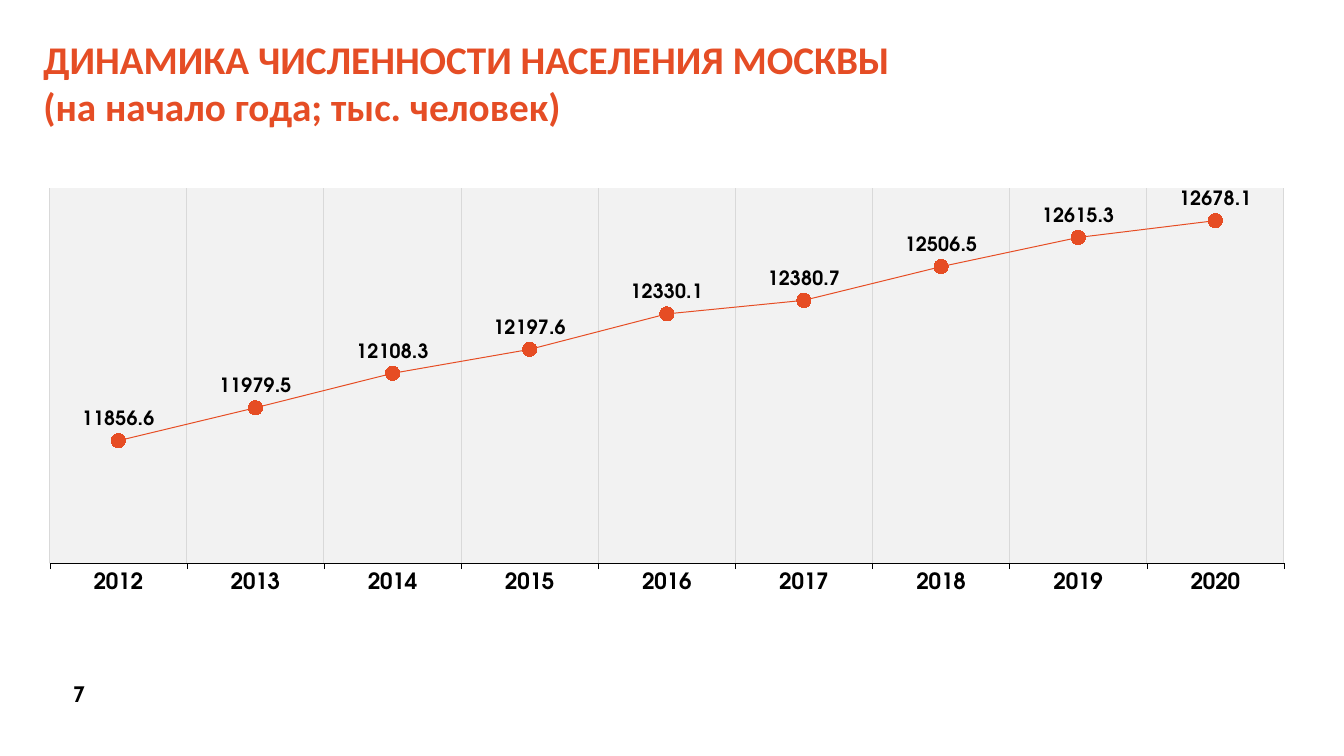
from pptx import Presentation
from pptx.chart.data import CategoryChartData
from pptx.dml.color import RGBColor
from pptx.enum.chart import XL_CHART_TYPE, XL_LABEL_POSITION, XL_MARKER_STYLE, XL_TICK_MARK
from pptx.enum.text import MSO_ANCHOR, PP_ALIGN
from pptx.oxml import parse_xml
from pptx.oxml.ns import nsdecls, qn
from pptx.util import Inches, Pt

ORANGE, BLACK, PALE, GRID = "E64D24", "000000", "F2F2F2", "D9D9D9"
TITLE_ORANGE = "E54D25"
TITLE = ["ДИНАМИКА ЧИСЛЕННОСТИ НАСЕЛЕНИЯ МОСКВЫ", "(на начало года; тыс. человек)"]
POPULATION = [11856.6, 11979.5, 12108.3, 12197.6, 12330.1,
              12380.7, 12506.5, 12615.3, 12678.1]
YEARS = [str(2012 + i) for i in range(len(POPULATION))]
WIDTH, HEIGHT = 13.33, 7.5
MARGIN = 0.33


def rgb(value):
    return RGBColor.from_string(value)


def set_font(font, name, size, color, bold=True):
    font.name, font.size, font.bold = name, Pt(size), bold
    font.color.rgb = rgb(color)


def set_line(line, color, width):
    line.color.rgb = rgb(color)
    line.width = Pt(width)


def add_title(s, lines):
    sp = s.shapes.title
    sp.left, sp.top = Inches(MARGIN), Inches(0.3)
    sp.width, sp.height = Inches(10.92), Inches(1.04)
    tf = sp.text_frame
    tf.text = "\n".join(lines)
    tf.word_wrap = True
    tf.vertical_anchor = MSO_ANCHOR.TOP
    for p in tf.paragraphs:
        p.alignment = PP_ALIGN.LEFT
        set_font(p.font, "Calibri", 28, TITLE_ORANGE)


def add_page_number(s, number):
    sp = s.shapes.add_textbox(Inches(0.51), Inches(6.7), Inches(0.55), Inches(0.37))
    tf = sp.text_frame
    tf.word_wrap = True
    p = tf.paragraphs[0]
    p.text = number
    p.alignment = PP_ALIGN.CENTER
    set_font(p.font, "Cabin", 16, BLACK)


def format_plot_area(chart, x, y, w, h, fill):
    area = chart._chartSpace.chart.plotArea
    for old in area.findall(qn("c:layout")):
        area.remove(old)
    sides = "".join(f'<c:{k} val="{v}"/>' for k, v in zip("xywh", (x, y, w, h)))
    area.insert(0, parse_xml(
        f'<c:layout {nsdecls("c")}><c:manualLayout><c:layoutTarget val="inner"/>'
        f'<c:xMode val="edge"/><c:yMode val="edge"/>{sides}</c:manualLayout></c:layout>'))
    area.append(parse_xml(
        f'<c:spPr {nsdecls("c", "a")}><a:solidFill><a:srgbClr val="{fill}"/></a:solidFill>'
        '<a:ln><a:noFill/></a:ln></c:spPr>'))


def format_axes(chart):
    axis = chart.category_axis
    axis.major_tick_mark = XL_TICK_MARK.OUTSIDE
    axis.has_major_gridlines = True
    set_line(axis.major_gridlines.format.line, GRID, 0.75)
    set_line(axis.format.line, BLACK, 0.18)
    set_font(axis.tick_labels.font, "TeX Gyre Adventor", 16, BLACK)
    axis = chart.value_axis
    axis.minimum_scale, axis.maximum_scale = 11400, 12800
    axis.has_major_gridlines = False
    axis.visible = False


def format_series(series):
    series.smooth = False
    set_line(series.format.line, ORANGE, 0.7)
    marker = series.marker
    marker.style, marker.size = XL_MARKER_STYLE.CIRCLE, 10
    marker.format.fill.solid()
    marker.format.fill.fore_color.rgb = rgb(ORANGE)
    marker.format.line.fill.background()
    labels = series.data_labels
    labels.show_value = True
    labels.position = XL_LABEL_POSITION.ABOVE
    labels.number_format, labels.number_format_is_linked = "0.0", False
    set_font(labels.font, "TeX Gyre Adventor", 14, BLACK)


def add_population_chart(s):
    data = CategoryChartData()
    data.categories = YEARS
    data.add_series("Series 1", POPULATION)
    chart = s.shapes.add_chart(
        XL_CHART_TYPE.LINE_MARKERS, Inches(MARGIN), Inches(1.79),
        Inches(12.53), Inches(4.2), data).chart
    chart.has_title = chart.has_legend = False
    set_font(chart.font, "TeX Gyre Adventor", 12, BLACK, False)
    chart.plots[0].vary_by_categories = False
    format_axes(chart)
    format_series(chart.plots[0].series[0])
    format_plot_area(chart, 0.013, 0.018, 0.977, 0.886, PALE)


def main():
    prs = Presentation()
    prs.slide_width, prs.slide_height = Inches(WIDTH), Inches(HEIGHT)
    s = prs.slides.add_slide(prs.slide_layouts[5])
    add_title(s, TITLE)
    add_population_chart(s)
    add_page_number(s, "7")
    prs.save("out.pptx")


if __name__ == "__main__":
    main()
